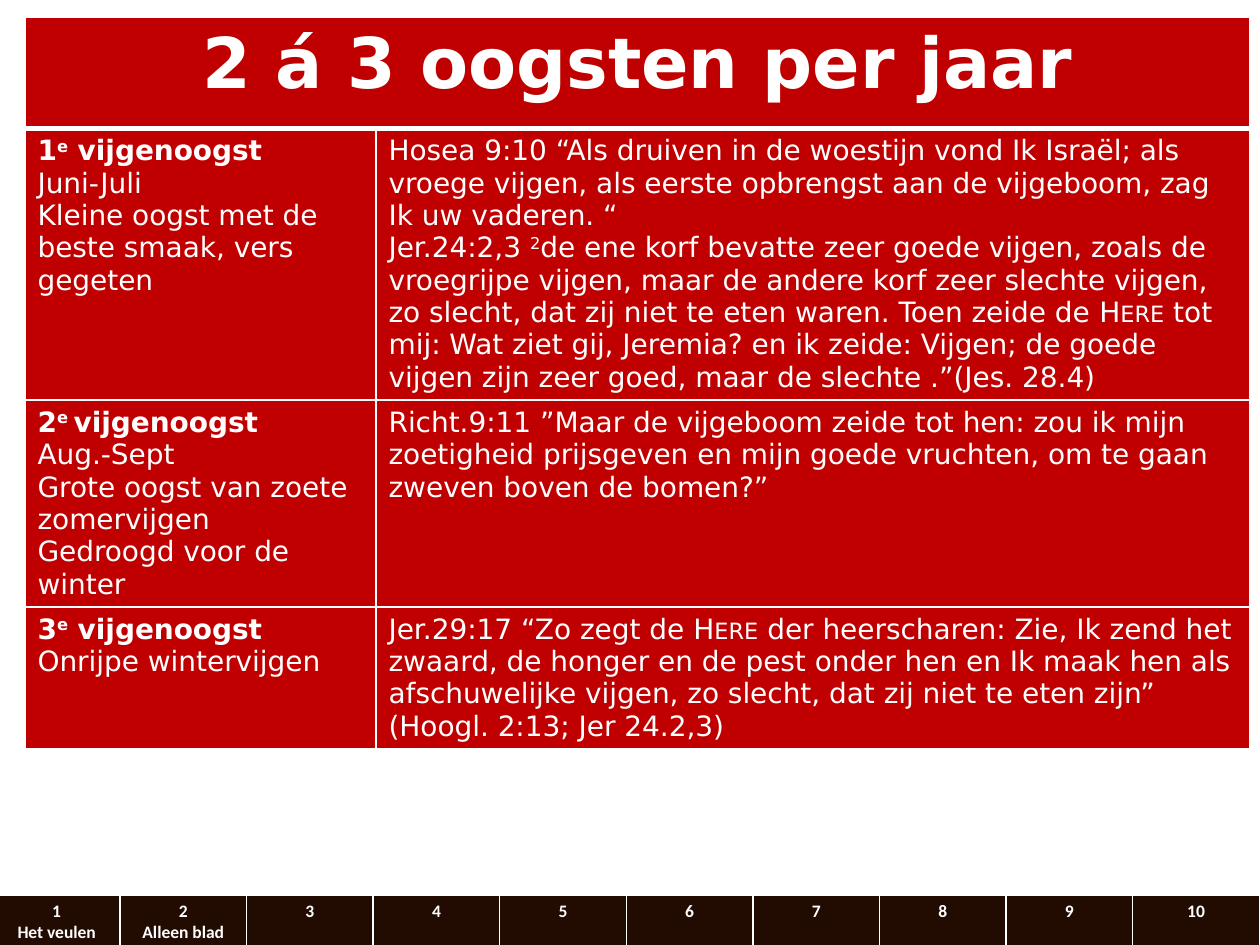
from dataclasses import dataclass
from typing import NamedTuple

from lxml.etree import SubElement
from pptx import Presentation
from pptx.dml.color import RGBColor as Color
from pptx.enum.text import PP_ALIGN as Align
from pptx.oxml.ns import qn
from pptx.util import Pt


@dataclass(frozen=True)
class Theme:
    harvest_fill: str = "C00000"
    nav_fill: str = "220B00"
    ink: str = "FFFFFF"
    body_font: str = "DejaVu Sans"
    nav_font: str = "Calibri"
    title_size: float = 40
    body_size: float = 16
    nav_size: float = 10
    thin: float = 1
    thick: float = 3


THEME = Theme()


class Span(NamedTuple):
    text: str
    bold: bool = False
    raised: bool = False
    small_caps: bool = False


class CellStyle(NamedTuple):
    fill: str
    font: str
    size: float
    align: Align = Align.LEFT
    top: float = THEME.thin
    bottom: float = THEME.thin


class Grid(NamedTuple):
    left: float
    top: float
    widths: list[float]
    heights: list[float]


class Harvest(NamedTuple):
    number: str
    heading: list[Span]
    notes: list[str]
    verses: list[list[Span]]


HERE = Span("Here", small_caps=True)
HARVESTS = [
    Harvest("1", [Span("e", True, True), Span(" vijgenoogst", True)],
            ["Juni-Juli", "Kleine oogst met de beste smaak, vers gegeten"],
            [[Span("Hosea 9:10 “Als druiven in de woestijn vond Ik Israël; als vroege "
                   "vijgen, als eerste opbrengst aan de vijgeboom, zag Ik uw vaderen. “")],
             [Span("Jer.24:2,3 "), Span("2", raised=True),
              Span("de ene korf bevatte zeer goede vijgen, zoals de vroegrijpe vijgen, "
                   "maar de andere korf zeer slechte vijgen, zo slecht, dat zij niet te "
                   "eten waren. Toen zeide de "),
              HERE,
              Span(" tot mij: Wat ziet gij, Jeremia? en ik zeide: Vijgen; de goede "
                   "vijgen zijn zeer goed, maar de slechte .”(Jes. 28.4)")]]),
    Harvest("2", [Span("e ", True, True), Span("vijgenoogst", True)],
            ["Aug.-Sept", "Grote oogst van zoete zomervijgen", "Gedroogd voor de winter"],
            [[Span("Richt.9:11 ”Maar de vijgeboom zeide tot hen: zou ik mijn zoetigheid "
                   "prijsgeven en mijn goede vruchten, om te gaan zweven boven de bomen?”")]]),
    Harvest("3", [Span("e", True, True), Span(" vijgenoogst", True)],
            ["Onrijpe wintervijgen"],
            [[Span("Jer.29:17 “Zo zegt de "), HERE,
              Span(" der heerscharen: Zie, Ik zend het zwaard, de honger en de pest onder "
                   "hen en Ik maak hen als afschuwelijke vijgen, zo slecht, dat zij niet "
                   "te eten zijn” (Hoogl. 2:13; Jer 24.2,3)")]]),
]
NAV_LABELS = {1: "Het veulen", 2: "Alleen blad"}
NAV_COUNT = 10

HARVEST_GRID = Grid(14.3, 9.6, [200.6, 499.4], [64, 134, 102, 70])
NAV_GRID = Grid(-3.8, 511.3, [72.36] * NAV_COUNT, [31])


def add_grid(slide, grid: Grid):
    """Add a table with fixed column widths and minimum row heights."""
    table = slide.shapes.add_table(
        len(grid.heights), len(grid.widths), Pt(grid.left), Pt(grid.top),
        Pt(sum(grid.widths)), Pt(sum(grid.heights))).table
    for column, width in zip(table.columns, grid.widths):
        column.width = Pt(width)
    for row, height in zip(table.rows, grid.heights):
        row.height = Pt(height)
    return table


def style_cell(cell, style: CellStyle) -> None:
    """Draw the four borders, then the fill, as the schema orders them."""
    properties = cell._tc.get_or_add_tcPr()
    borders = {"a:lnL": THEME.thin, "a:lnR": THEME.thin,
               "a:lnT": style.top, "a:lnB": style.bottom}
    for tag, width in borders.items():
        border = SubElement(properties, qn(tag), w=str(Pt(width)))
        paint = SubElement(border, qn("a:solidFill"))
        SubElement(paint, qn("a:srgbClr"), val=THEME.ink)
    cell.fill.solid()
    cell.fill.fore_color.rgb = Color.from_string(style.fill)


def write_cell(cell, paragraphs: list[list[Span]], style: CellStyle) -> None:
    style_cell(cell, style)
    frame = cell.text_frame
    for index, spans in enumerate(paragraphs):
        paragraph = frame.add_paragraph() if index else frame.paragraphs[0]
        paragraph.alignment = style.align
        for span in spans:
            run = paragraph.add_run()
            run.text = span.text
            font_format = {"name": style.font, "size": Pt(style.size), "bold": span.bold}
            for attribute, value in font_format.items():
                setattr(run.font, attribute, value)
            run.font.color.rgb = Color.from_string(THEME.ink)
            if span.raised:
                run._r.get_or_add_rPr().set("baseline", "30000")
            if span.small_caps:
                run._r.get_or_add_rPr().set("cap", "small")


def draw_harvests(slide) -> None:
    table = add_grid(slide, HARVEST_GRID)
    body = CellStyle(THEME.harvest_fill, THEME.body_font, THEME.body_size)
    title = body._replace(size=THEME.title_size, align=Align.CENTER, bottom=THEME.thick)

    # Title across both columns
    table.cell(0, 0).merge(table.cell(0, 1))
    write_cell(table.cell(0, 0), [[Span("2 á 3 oogsten per jaar", True)]], title)
    style_cell(table.cell(0, 1), title)

    # One row per harvest
    for row, harvest in enumerate(HARVESTS, start=1):
        style = body._replace(top=THEME.thick) if row == 1 else body
        summary = [[Span(harvest.number, True), *harvest.heading]]
        summary += [[Span(note)] for note in harvest.notes]
        write_cell(table.cell(row, 0), summary, style)
        write_cell(table.cell(row, 1), harvest.verses, style)


def draw_navigation(slide) -> None:
    table = add_grid(slide, NAV_GRID)
    style = CellStyle(THEME.nav_fill, THEME.nav_font, THEME.nav_size,
                      Align.CENTER, bottom=THEME.thick)
    for number in range(1, NAV_COUNT + 1):
        lines = [[Span(str(number), True)]]
        if number in NAV_LABELS:
            lines.append([Span(NAV_LABELS[number], True)])
        write_cell(table.cell(0, number - 1), lines, style)


def main() -> None:
    deck = Presentation()
    deck.slide_width, deck.slide_height = Pt(720), Pt(540)
    slide = deck.slides.add_slide(deck.slide_layouts[6])
    draw_harvests(slide)
    draw_navigation(slide)
    deck.save("out.pptx")


if __name__ == "__main__":
    main()
